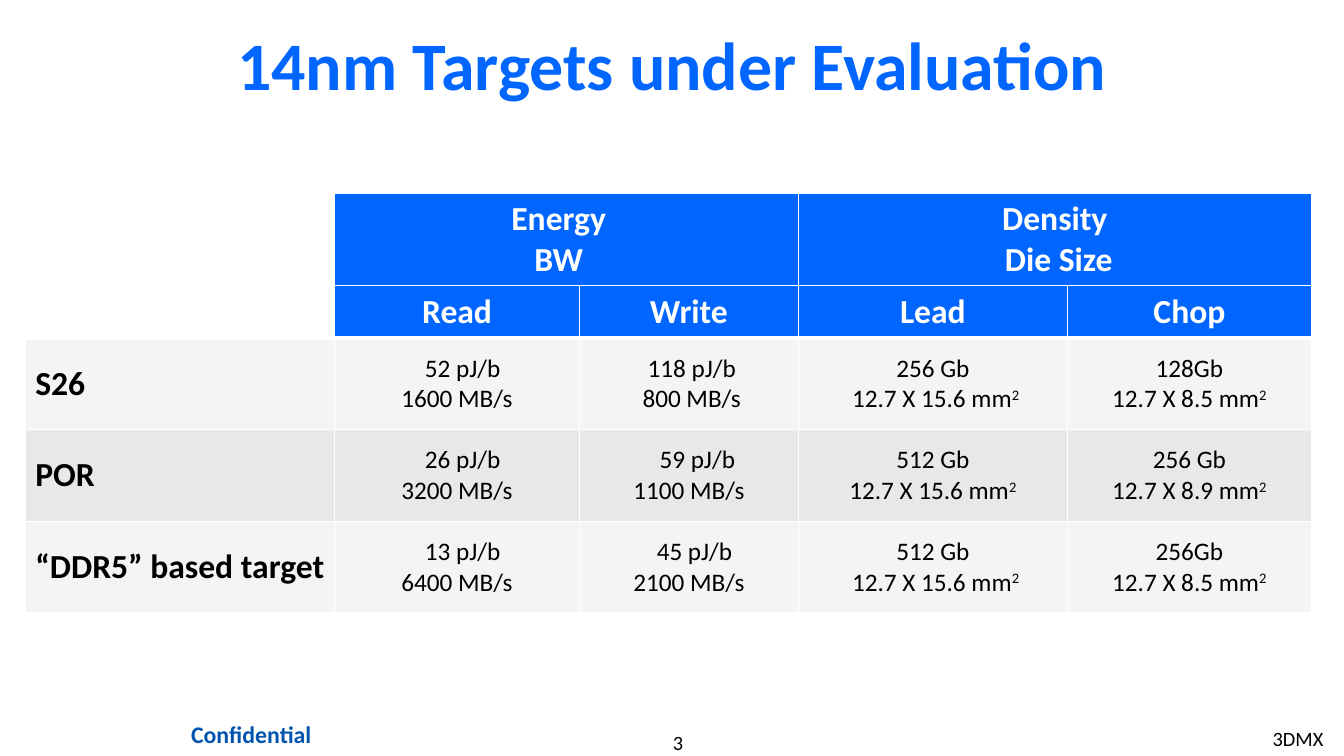
from pptx import Presentation
from pptx.dml.color import RGBColor
from pptx.enum.text import MSO_ANCHOR, PP_ALIGN
from pptx.oxml.ns import qn
from pptx.util import Pt
from lxml.etree import SubElement

BLUE, NAVY, BLACK, WHITE = "0066FF", "0054B0", "000000", "FFFFFF"
LIGHT, MEDIUM = "F4F4F4", "E8E8E8"
COLUMN_WIDTHS = [221, 175, 156.25, 192.25, 174.25]
ROW_HEIGHTS = [65.5, 37.5, 65.5, 65.5, 65.5]
GROUP_HEADERS = {1: [("Energy", -11), ("BW", 0)], 3: [("Density", 0), ("Die Size", 5.5)]}
COLUMN_HEADERS = ["Read", "Write", "Lead", "Chop"]
TARGETS = [
    ("S26", [
        [("52 pJ/b", 8), ("1600 MB/s", 0)],
        [("118 pJ/b", 4), ("800 MB/s", 4)],
        [("256 Gb", 0), ("12.7 X 15.6 mm^2", 4)],
        [("128Gb", 0), ("12.7 X 8.5 mm^2", 0)],
    ]),
    ("POR", [
        [("26 pJ/b", 8), ("3200 MB/s", 0)],
        [("59 pJ/b", 12), ("1100 MB/s", 0)],
        [("512 Gb", 0), ("12.7 X 15.6 mm^2", 0)],
        [("256 Gb", 0), ("12.7 X 8.9 mm^2", 0)],
    ]),
    ("“DDR5” based target", [
        [("13 pJ/b", 8), ("6400 MB/s", 0)],
        [("45 pJ/b", 8), ("2100 MB/s", 0)],
        [("512 Gb", 0), ("12.7 X 15.6 mm^2", 4)],
        [("256Gb", 0), ("12.7 X 8.5 mm^2", 0)],
    ]),
]


def color(value):
    return RGBColor.from_string(value)


class SlideBuilder:
    font_name = "Calibri"

    def __init__(self, presentation):
        self.slide = presentation.slides.add_slide(presentation.slide_layouts[6])

    def style(self, paragraph, size, text_color, bold, align):
        paragraph.alignment = align
        for run in paragraph.runs:
            run.font.name = self.font_name
            run.font.size = Pt(size)
            run.font.bold = bold
            run.font.color.rgb = color(text_color)

    def text(self, content, left, top, width, height, size, text_color,
             bold=False, align=PP_ALIGN.CENTER, insets=(7.2, 3.6), anchor=MSO_ANCHOR.TOP, wrap=True):
        shape = self.slide.shapes.add_textbox(Pt(left), Pt(top), Pt(width), Pt(height))
        frame = shape.text_frame
        frame.word_wrap = wrap
        frame.vertical_anchor = anchor
        frame.margin_left = frame.margin_right = Pt(insets[0])
        frame.margin_top = frame.margin_bottom = Pt(insets[1])
        frame.text = content
        self.style(frame.paragraphs[0], size, text_color, bold, align)

    def table(self, left, top, widths, heights):
        frame = self.slide.shapes.add_table(
            len(heights), len(widths), Pt(left), Pt(top), Pt(sum(widths)), Pt(sum(heights)))
        table = frame.table
        for column, width in zip(table.columns, widths):
            column.width = Pt(width)
        for row, height in zip(table.rows, heights):
            row.height = Pt(height)
        return table

    def borders(self, cell, top, bottom):
        properties = cell._tc.get_or_add_tcPr()
        for side, width in (("L", 1), ("R", 1), ("T", top), ("B", bottom)):
            line = SubElement(properties, qn(f"a:ln{side}"), w=str(Pt(width)))
            fill = SubElement(line, qn("a:solidFill"))
            SubElement(fill, qn("a:srgbClr"), val=WHITE)

    def cell(self, cell, lines, size, text_color, fill, bold=False, align=PP_ALIGN.CENTER):
        cell.vertical_anchor = MSO_ANCHOR.MIDDLE
        cell.fill.solid()
        cell.fill.fore_color.rgb = color(fill)
        cell.text_frame.text = "\n".join(content.partition("^")[0] for content, indent in lines)
        for paragraph, (content, indent) in zip(cell.text_frame.paragraphs, lines):
            exponent = content.partition("^")[2]
            if exponent:
                run = paragraph.add_run()
                run.text = exponent
                run.font._element.set("baseline", "30000")
            if indent:
                margin = "marL" if indent > 0 else "marR"
                paragraph._p.get_or_add_pPr().set(margin, str(Pt(abs(indent))))
            self.style(paragraph, size, text_color, bold, align)


def main():
    presentation = Presentation()
    presentation.slide_width = Pt(960)
    presentation.slide_height = Pt(540)
    builder = SlideBuilder(presentation)

    builder.text("3", 400.5, 521.5, 167.5, 17.5, 14.5, BLACK, insets=(0, 0))
    builder.text("3DMX", 902, 515, 50.5, 25, 14.5, BLACK, align=PP_ALIGN.LEFT, wrap=False)
    builder.text("Confidential", 111.5, 510, 136, 29.5, 17, NAVY, bold=True, insets=(8.6, 4.3))
    builder.text("14nm Targets under Evaluation", 72, 12.25, 816, 66.25, 48.5, BLUE,
                 bold=True, anchor=MSO_ANCHOR.MIDDLE)

    table = builder.table(18, 138.5, COLUMN_WIDTHS, ROW_HEIGHTS)
    for row in range(len(ROW_HEIGHTS)):
        for column in range(len(COLUMN_WIDTHS)):
            builder.borders(table.cell(row, column), 3 if row == 2 else 1, 3 if row == 1 else 1)

    table.cell(0, 0).merge(table.cell(1, 0))
    for row in range(2):
        table.cell(row, 0).fill.background()
    for column, lines in GROUP_HEADERS.items():
        table.cell(0, column).merge(table.cell(0, column + 1))
        builder.cell(table.cell(0, column), lines, 24, WHITE, BLUE, bold=True)
    for column, header in enumerate(COLUMN_HEADERS, 1):
        builder.cell(table.cell(1, column), [(header, 0)], 24, WHITE, BLUE, bold=True)
    for row, (name, values) in enumerate(TARGETS, 2):
        fill = MEDIUM if row % 2 else LIGHT
        builder.cell(table.cell(row, 0), [(name, 0)], 24, BLACK, fill, bold=True, align=PP_ALIGN.LEFT)
        for column, lines in enumerate(values, 1):
            builder.cell(table.cell(row, column), lines, 18, BLACK, fill)

    presentation.save("out.pptx")


if __name__ == "__main__":
    main()
